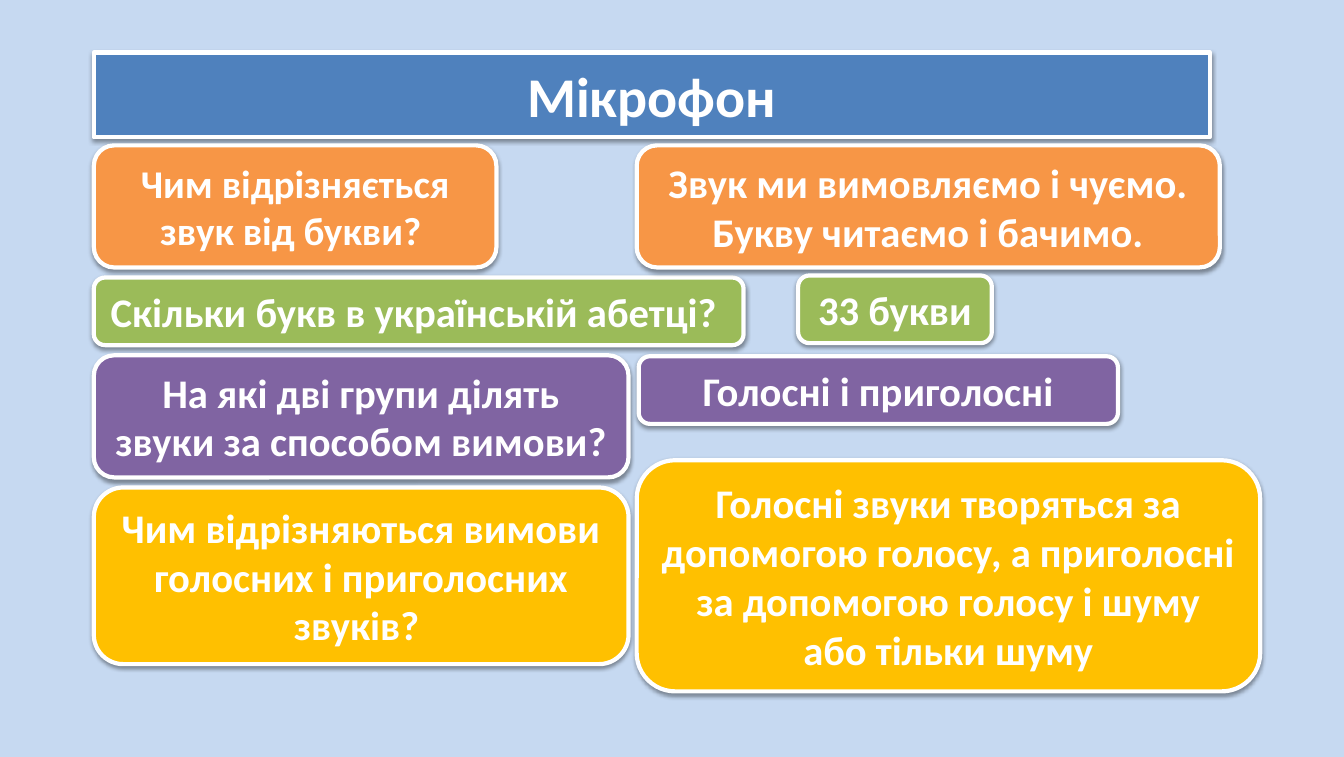
from lxml import etree
from pptx import Presentation
from pptx import util as u
from pptx.dml.color import RGBColor
from pptx.enum import shapes, text
from pptx.oxml.ns import qn

PX = 9144  # EMU in one px, 100 px to the inch
HUES = {"back": "C6D9F1", "blue": "4F81BD", "orange": "F79646", "green": "9BBB59",
        "violet": "8064A2", "gold": "FFC000", "white": "FFFFFF", "black": "000000"}
FRAME = {"margin_left": 12 * PX, "margin_right": 12 * PX,
         "margin_top": 6 * PX, "margin_bottom": 6 * PX,
         "vertical_anchor": text.MSO_ANCHOR.MIDDLE}
FONT = {"name": "Calibri", "bold": True}

# Question and answer cards: left, top, width, height, hue, size, wrap, words
CARDS = [
    (93, 144, 399, 121, "orange", 28, True, "Чим відрізняється звук від букви? "),
    (93, 275, 644, 67, "green", 29, True, "Скільки букв в українській абетці? "),
    (93, 352, 530, 121, "violet", 29, True,
     "На які дві групи ділять звуки за способом вимови? "),
    (631, 144, 578, 121, "orange", 29, True,
     "Звук ми вимовляємо і чуємо. Букву читаємо і бачимо."),
    (791, 273, 192, 67, "green", 29, False, "33 букви "),
    (633, 353, 475, 67, "violet", 29, True, "Голосні і приголосні"),
    (93, 483, 530, 175, "gold", 29, True,
     "Чим відрізняються вимови голосних і приголосних звуків? "),
    (631, 456, 618, 229, "gold", 29, True,
     "Голосні звуки творяться за допомогою голосу, а приголосні "
     "за допомогою голосу і шуму або тільки шуму"),
]


def hue(key):
    return RGBColor.from_string(HUES[key])


def apply(item, values):
    for key, value in values.items():
        setattr(item, key, value)


def shade(box):
    """Soft shadow straight below the box."""
    box.shadow.inherit = False
    effects = box._element.spPr.find(qn("a:effectLst"))
    outer = etree.SubElement(effects, qn("a:outerShdw"), blurRad=str(u.Pt(3.1)),
                             dist=str(u.Pt(1.6)), dir="5400000", rotWithShape="0")
    tint = etree.SubElement(outer, qn("a:srgbClr"), val=HUES["black"])
    etree.SubElement(tint, qn("a:alpha"), val="38000")


def style(box, key):
    box.fill.solid()
    box.fill.fore_color.rgb = hue(key)
    box.line.color.rgb = hue("white")
    box.line.width = u.Pt(3)
    shade(box)


def write(box, words, size, wrap, fit):
    frame = box.text_frame
    apply(frame, {**FRAME, "word_wrap": wrap, "auto_size": fit})
    frame.text = words
    para = frame.paragraphs[0]
    para.alignment = text.PP_ALIGN.CENTER
    font = para.runs[0].font
    apply(font, {**FONT, "size": u.Pt(size)})
    font.color.rgb = hue("white")


def head(slide, words):
    box = slide.shapes.title
    apply(box, {"left": 93 * PX, "top": 52 * PX, "width": 1106 * PX, "height": 84 * PX})
    style(box, "blue")
    write(box, words, 40, True, text.MSO_AUTO_SIZE.NONE)


def card(slide, left, top, width, height, key, size, wrap, words):
    box = slide.shapes.add_shape(shapes.MSO_SHAPE.ROUNDED_RECTANGLE,
                                 left * PX, top * PX, width * PX, height * PX)
    style(box, key)
    write(box, words, size, wrap, text.MSO_AUTO_SIZE.SHAPE_TO_FIT_TEXT)


def main():
    deck = Presentation()
    apply(deck, {"slide_width": 1332 * PX, "slide_height": 750 * PX})
    slide = deck.slides.add_slide(deck.slide_layouts[5])

    # Background
    back = slide.background.fill
    back.solid()
    back.fore_color.rgb = hue("back")

    # Title and cards
    head(slide, "Мікрофон")
    for row in CARDS:
        card(slide, *row)
    deck.save("out.pptx")


if __name__ == "__main__":
    main()
